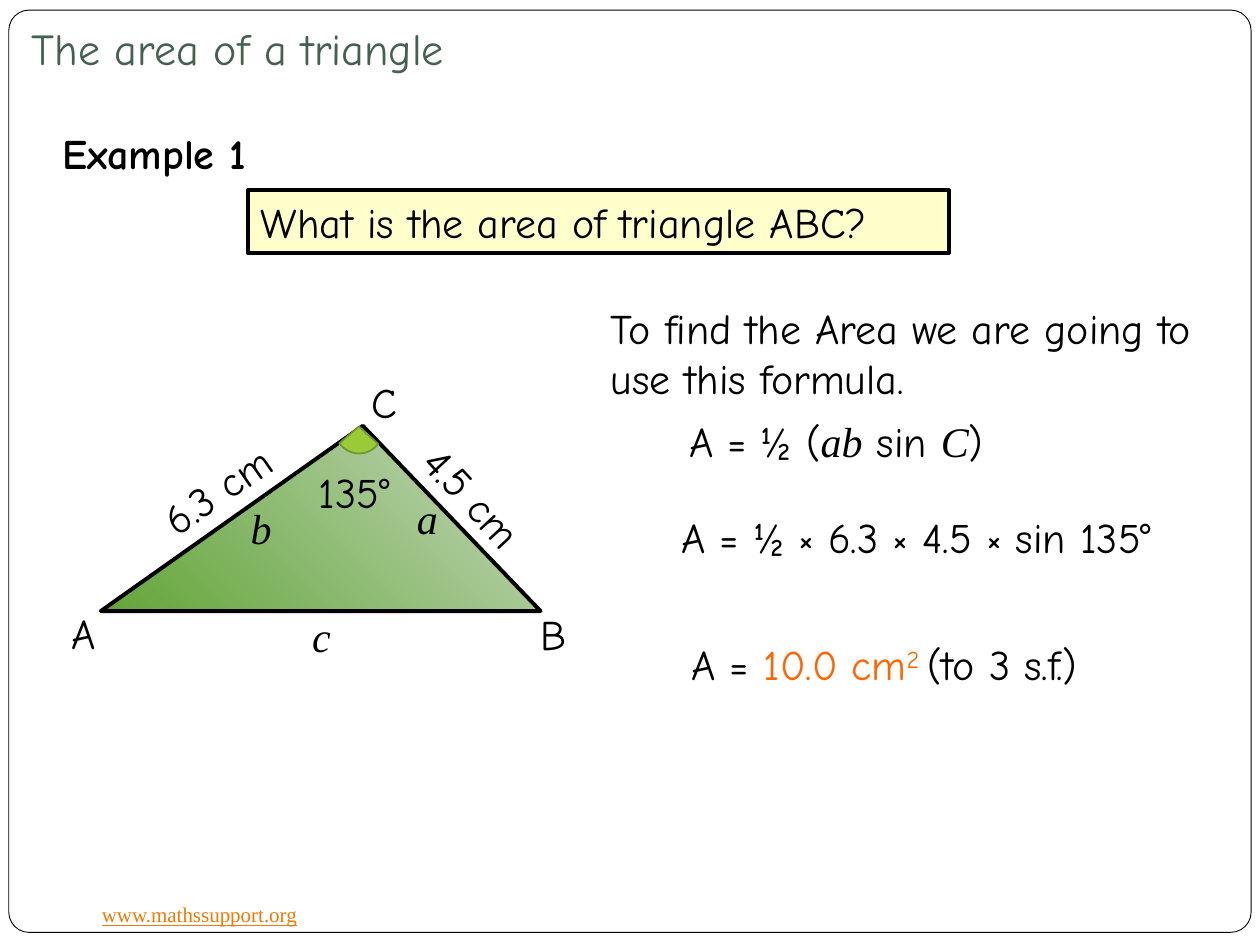
from pptx import Presentation
from pptx.dml.color import RGBColor
from pptx.enum.shapes import MSO_SHAPE as Shape
from pptx.enum.text import MSO_ANCHOR as Anchor, MSO_AUTO_SIZE as Fit, PP_ALIGN as Align
from pptx.util import Inches, Pt

COLORS = {
    "black": "000000", "title": "455F51", "link": "EE7B08", "answer": "FF6600",
    "cream": "FFFFCC", "dark": "63A537", "pale": "C4D7BD",
    "lime": "99CB38", "olive": "719629",
}
SANS, SERIF = "Comic Neue", "Times New Roman"
MATH = {"face": SERIF, "italic": True}


def color(name):
    return RGBColor.from_string(COLORS[name])


def write(para, text, size=24, face=SANS, ink="black", bold=False,
          italic=False, under=False, raised=False):
    run = para.add_run()
    run.text = text
    font = run.font
    font.size, font.name = Pt(size), face
    font.bold, font.italic, font.underline = bold, italic, under
    font.color.rgb = color(ink)
    if raised:
        run._r.get_or_add_rPr().set("baseline", "30000")


class Board:
    """Holds the current slide and the shapes that new elements join."""

    def __init__(self, slide):
        self.slide = slide
        self.shapes = slide.shapes

    def title(self, text, box):
        head = self.slide.shapes.title
        head.left, head.top, head.width, head.height = map(Inches, box)
        frame = head.text_frame
        frame.auto_size, frame.word_wrap = Fit.NONE, True
        frame.vertical_anchor = Anchor.BOTTOM
        frame.margin_left = frame.margin_right = frame.margin_bottom = Inches(0.1)
        frame.margin_top = Inches(0.05)
        para = frame.paragraphs[0]
        para.alignment = Align.LEFT
        write(para, text, size=25.2, ink="title")

    def style(self, shape, fill, line, width):
        shape.shadow.inherit = False
        if fill:
            shape.fill.solid()
            shape.fill.fore_color.rgb = color(fill)
        else:
            shape.fill.background()
        shape.line.color.rgb = color(line)
        shape.line.width = Pt(width)

    def shape(self, kind, box, fill=None, line="black", width=2.25, adjust=()):
        shape = self.shapes.add_shape(kind, *map(Inches, box))
        for i, value in enumerate(adjust):
            shape.adjustments[i] = value
        self.style(shape, fill, line, width)
        return shape

    def fill_text(self, shape, runs, wrap=False):
        """Put (text, format) runs in one left-aligned paragraph."""
        frame = shape.text_frame
        frame.word_wrap = wrap
        frame.auto_size = Fit.SHAPE_TO_FIT_TEXT
        frame.vertical_anchor = Anchor.TOP
        para = frame.paragraphs[0]
        para.alignment = Align.LEFT
        for text, form in runs:
            write(para, text, **form)

    def text(self, box, *runs, turn=0, wrap=False):
        area = self.shapes.add_textbox(*map(Inches, box))
        area.rotation = turn
        self.fill_text(area, runs, wrap)

    def polygon(self, points, start, end):
        first, *rest = [(Inches(x), Inches(y)) for x, y in points]
        pen = self.shapes.build_freeform(*first, scale=1.0)
        pen.add_line_segments(rest, close=True)
        shape = pen.convert_to_shape()
        self.style(shape, None, "black", 2.25)
        shape.fill.gradient()
        shape.fill.gradient_angle = 45
        for stop, name, place in zip(shape.fill.gradient_stops, (start, end), (0, 1)):
            stop.color.rgb = color(name)
            stop.position = place


def main():
    deck = Presentation()
    deck.slide_width, deck.slide_height = Inches(10), Inches(7.5)
    board = Board(deck.slides.add_slide(deck.slide_layouts[5]))

    board.shape(Shape.ROUNDED_RECTANGLE, (0.07, 0.08, 9.86, 7.32),
                width=0.5, adjust=[0.022])
    board.text((0.71, 7.11, 1.77, 0.3), ("www.mathssupport.org", {
        "size": 12, "face": SERIF, "ink": "link", "under": True}))
    board.title("The area of a triangle", (0.15, 0.14, 9, 0.55))

    ask = board.shape(Shape.RECTANGLE, (1.97, 1.51, 5.56, 0.5), "cream")
    board.fill_text(ask, [("What is the area of triangle ABC?", {})])

    # Triangle with its vertex, length and angle labels
    board.shapes = board.slide.shapes.add_group_shape().shapes
    board.polygon([(0.8, 4.85), (4.29, 4.85), (2.88, 3.38)], "dark", "pale")
    for text, x, y, width, turn in [
        ("A", 0.47, 4.77, 0.45, 0),
        ("B", 4.19, 4.78, 0.42, 0),
        ("C", 2.85, 2.94, 0.4, 0),
        ("6.3 cm", 1.15, 3.61, 1.23, 325.5),
        ("4.5 cm", 3.17, 3.73, 1.23, 47.1),
        ("135°", 2.43, 3.65, 0.9, 0),
    ]:
        board.text((x, y, width, 0.51), (text, {}), turn=turn)
    board.shapes = board.slide.shapes

    for side, x, y in [("a", 3.21, 3.86), ("b", 1.89, 3.94), ("c", 2.38, 4.8)]:
        board.text((x, y, 0.37, 0.5), (side, MATH))
    board.shape(Shape.PIE, (2.65, 3.17, 0.4, 0.43), "lime", "olive", 1,
                adjust=[25.44, 83.72])

    # Working
    board.text((4.75, 2.35, 5.18, 0.91),
               ("To find the Area we are going to use this formula.", {}), wrap=True)
    board.text((5.37, 3.25, 2.58, 0.5), ("A = ½ (", {}), ("ab", MATH),
               (" sin ", {}), ("C", MATH), (")", {}))
    board.text((5.31, 4.01, 4.55, 0.5), ("A = ½ × 6.3 × 4.5 × sin 135°", {}))
    board.text((5.39, 5.02, 3.77, 0.5), ("A = ", {}),
               ("10.0 cm", {"ink": "answer"}),
               ("2 ", {"ink": "answer", "raised": True}), ("(to 3 s.f.)", {}))
    board.text((0.4, 0.96, 1.87, 0.5), ("Example 1", {"bold": True}))

    deck.save("out.pptx")


if __name__ == "__main__":
    main()
